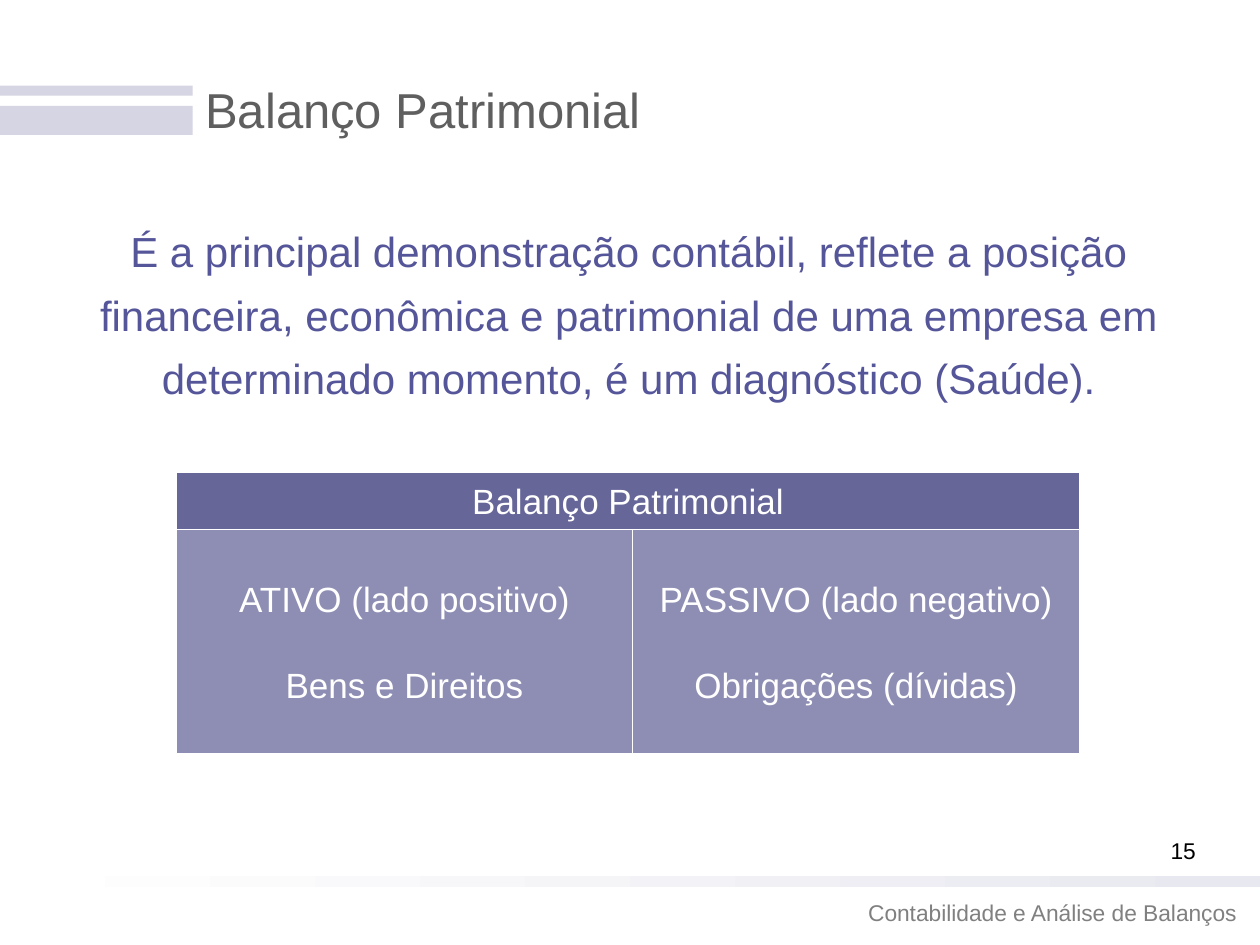
from pptx import Presentation
from pptx.dml.color import RGBColor
from pptx.enum.shapes import MSO_SHAPE
from pptx.enum.text import MSO_ANCHOR, MSO_AUTO_SIZE, PP_ALIGN
from pptx.util import Inches, Pt

COLORS = {
    "bar": "D5D5E3", "fade_start": "FFFFFF", "fade_end": "E8E8F0",
    "title": "5F5F5F", "definition": "555599", "footer": "808080",
    "number": "000000", "header": "666699", "panel": "8E8EB4", "white": "FFFFFF",
}
COLORS = {name: RGBColor.from_string(code) for name, code in COLORS.items()}

deck = Presentation()
deck.slide_width, deck.slide_height = Inches(10), Inches(7.5)
slide = deck.slides.add_slide(deck.slide_layouts[5])


def area(left, top, width, height):
    """Turn percentages of the slide's width and height into lengths."""
    across, down = deck.slide_width / 100, deck.slide_height / 100
    return [round(share * unit) for share, unit in
            zip((left, top, width, height), (across, down, across, down))]


def write(holder, lines, size, color, align, anchor=MSO_ANCHOR.MIDDLE, **spacing):
    """Fill a shape with paragraphs; spacing holds paragraph format values."""
    frame = holder.text_frame
    frame.text = "\n".join(lines)
    frame_format = {"word_wrap": True, "auto_size": MSO_AUTO_SIZE.NONE,
                    "vertical_anchor": anchor,
                    "margin_left": Inches(0.1), "margin_right": Inches(0.1),
                    "margin_top": Inches(0.05), "margin_bottom": Inches(0.05)}
    for name, value in frame_format.items():
        setattr(frame, name, value)
    for paragraph in frame.paragraphs:
        for name, value in {"alignment": align, **spacing}.items():
            setattr(paragraph, name, value)
        font = paragraph.runs[0].font
        for name, value in {"name": "Arial", "size": Pt(size)}.items():
            setattr(font, name, value)
        font.color.rgb = COLORS[color]
    frame.paragraphs[0].space_before = Pt(0)


# Bars beside the title
for top, height in ((11.2, 3.07), (9.07, 1.07)):
    bar = slide.shapes.add_shape(MSO_SHAPE.RECTANGLE, *area(0, top, 15.3, height))
    bar.shadow.inherit = False
    bar.fill.solid()
    bar.fill.fore_color.rgb = COLORS["bar"]
    bar.line.fill.background()

# Fading rule above the footer
rule = slide.shapes.add_shape(MSO_SHAPE.RECTANGLE, *area(0, 92.67, 100, 1.2))
rule.shadow.inherit = False
rule.line.fill.background()
rule.fill.gradient()
rule.fill.gradient_angle = 0
for stop, color, position in zip(rule.fill.gradient_stops,
                                 ("fade_start", "fade_end"), (0, 1)):
    stop.color.rgb = COLORS[color]
    stop.position = position

# Title
title = slide.shapes.title
title.left, title.top, title.width, title.height = area(15.3, 3.2, 85, 16.67)
write(title, ["Balanço Patrimonial"], 28, "title", PP_ALIGN.LEFT)

# Footer, page number and definition
footer = slide.shapes.add_textbox(*area(46.9, 94.4, 52.2, 4.27))
write(footer, ["Contabilidade e Análise de Balanços"], 13, "footer", PP_ALIGN.RIGHT)

number = slide.shapes.add_textbox(*area(89.8, 87.87, 8.2, 6.67))
write(number, ["15"], 13, "number", PP_ALIGN.CENTER, MSO_ANCHOR.TOP)

definition = slide.shapes.add_textbox(*area(5.8, 21.87, 88.2, 20.53))
write(definition,
      ["É a principal demonstração contábil, reflete a posição financeira, "
       "econômica e patrimonial de uma empresa em determinado momento, "
       "é um diagnóstico (Saúde)."],
      24, "definition", PP_ALIGN.CENTER, MSO_ANCHOR.TOP, line_spacing=1.26)

# Balance sheet: header over the asset and liability sides
left, top, header_height, side_height = 14, 50, 6, 23.73
asset_width, liability_width = 36.2, 35.5
sides_top = top + header_height
blocks = [
    ((left, top, asset_width + liability_width, header_height), "header",
     ["Balanço Patrimonial"]),
    ((left, sides_top, asset_width, side_height), "panel",
     ["ATIVO (lado positivo)", "Bens e Direitos"]),
    ((left + asset_width, sides_top, liability_width, side_height), "panel",
     ["PASSIVO (lado negativo)", "Obrigações (dívidas)"]),
]
for shares, color, lines in blocks:
    block = slide.shapes.add_shape(MSO_SHAPE.RECTANGLE, *area(*shares))
    block.shadow.inherit = False
    block.fill.solid()
    block.fill.fore_color.rgb = COLORS[color]
    block.line.color.rgb = COLORS["white"]
    block.line.width = Pt(0.75)
    write(block, lines, 20, "white", PP_ALIGN.CENTER, space_before=Pt(25))

deck.save("out.pptx")
